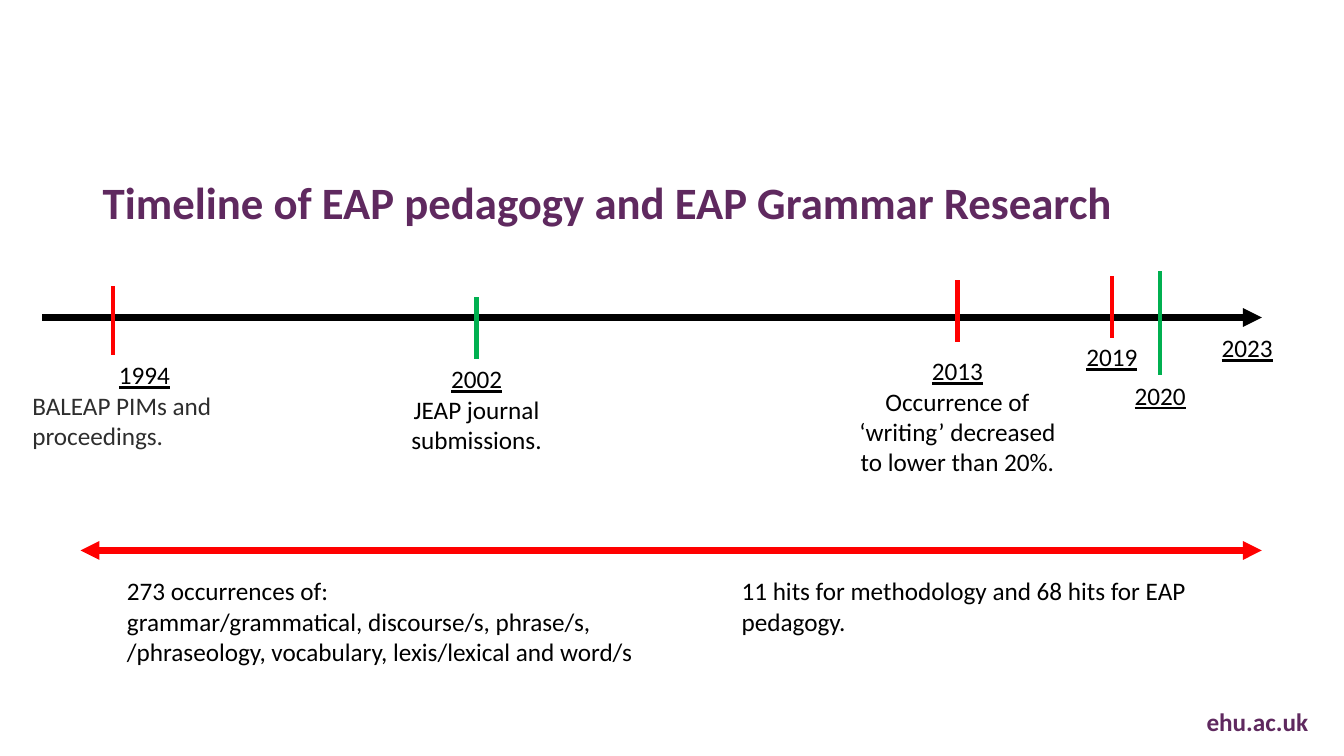
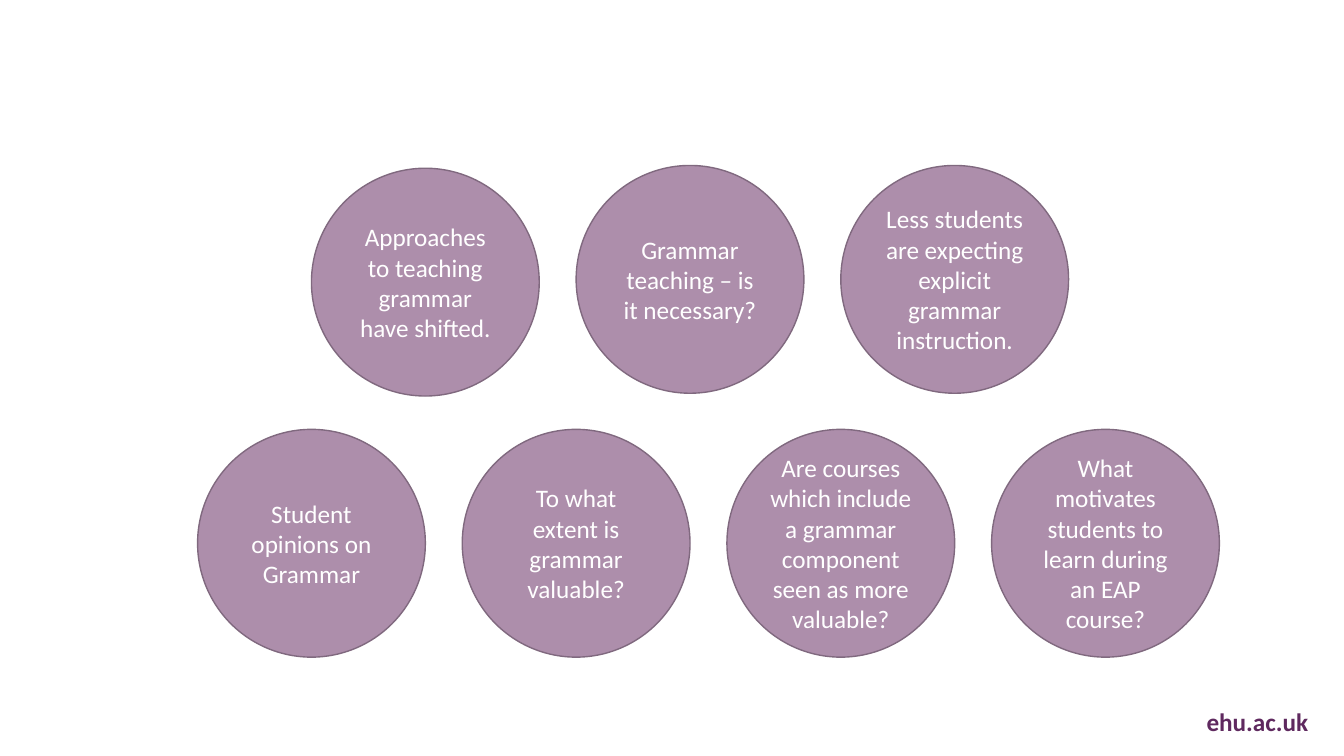
from dataclasses import dataclass
from typing import Optional

from lxml.etree import SubElement
from pptx import Presentation
from pptx.dml.color import RGBColor
from pptx.enum.shapes import MSO_CONNECTOR, MSO_SHAPE
from pptx.enum.text import MSO_ANCHOR, PP_ALIGN
from pptx.oxml.ns import qn
from pptx.util import Cm, Pt

FONT = "Calibri"
PURPLE, MAUVE, MAUVE_EDGE = "5F295F", "AD8EAB", "80697F"
BLACK, GREY, WHITE = "000000", "2E2E2E", "FFFFFF"
RED, GREEN = "FF0000", "00B050"

BODY = {"name": FONT, "size": Pt(18)}
YEAR = BODY | {"underline": True}
FOOTER = BODY | {"bold": True}
TITLE = FOOTER | {"size": Pt(32)}

AXIS_Y, RANGE_Y, ARROW_END = 8.0, 13.87, 31.8
FINDING_TOP, FINDING_W, FINDING_H = 14.38, 13.39, 2.57
CIRCLE_D, CIRCLE_PITCH = 5.74, 6.67


@dataclass(frozen=True)
class Para:
    text: str
    fmt: dict
    color: str = BLACK
    align: PP_ALIGN = PP_ALIGN.LEFT
    spacing: float = 1.0


@dataclass(frozen=True)
class Tick:
    x: float
    top: float
    bottom: float
    color: str


@dataclass(frozen=True)
class Milestone:
    year: str
    center: float
    top: float
    tick: Optional[Tick] = None
    note: str = ""
    width: float = 4.24
    height: float = 1.02
    note_color: str = BLACK
    note_align: PP_ALIGN = PP_ALIGN.CENTER


@dataclass(frozen=True)
class CircleRow:
    left: float
    top: float
    texts: tuple


MILESTONES = (
    Milestone("1994", 3.64, 8.94, Tick(2.84, 7.21, 8.94, RED), "BALEAP PIMs and proceedings.",
              6.15, 2.57, GREY, PP_ALIGN.LEFT),
    Milestone("2002", 12.01, 9.04, Tick(12.01, 7.49, 9.04, GREEN), "JEAP journal submissions.",
              height=2.57),
    Milestone("2013", 24.13, 8.84, Tick(24.13, 7.06, 8.61, RED),
              "Occurrence of ‘writing’ decreased to lower than 20%.", 6.05, 3.33),
    Milestone("2019", 28.02, 8.48, Tick(28.02, 6.96, 8.51, RED)),
    Milestone("2020", 29.24, 9.45, Tick(29.24, 6.83, 9.45, GREEN)),
    Milestone("2023", 31.43, 8.26, height=1.8),
)

FINDINGS = (
    (2.95, ("273 occurrences of:",
            "grammar/grammatical, discourse/s, phrase/s, /phraseology, vocabulary, "
            "lexis/lexical and word/s")),
    (18.44, ("11 hits for methodology and 68 hits for EAP pedagogy.",)),
)

CIRCLE_ROWS = (
    CircleRow(7.85, 4.24, ("Approaches to teaching grammar have shifted.",)),
    CircleRow(14.52, 4.17, (
        "Grammar teaching – is it necessary?",
        "Less students are expecting explicit grammar instruction.",
    )),
    CircleRow(4.98, 10.82, (
        "Student opinions on Grammar",
        "To what extent is grammar valuable?",
        "Are courses which include a grammar component seen as more valuable?",
        "What motivates students to learn during an EAP course?",
    )),
)


def rgb(color: str) -> RGBColor:
    return RGBColor.from_string(color)


def write(tf, paras: list[Para], anchor=MSO_ANCHOR.TOP) -> None:
    tf.word_wrap = True
    tf.vertical_anchor = anchor
    for i, para in enumerate(paras):
        p = tf.paragraphs[0] if i == 0 else tf.add_paragraph()
        p.alignment = para.align
        p.line_spacing = para.spacing
        r = p.add_run()
        r.text = para.text
        for name, value in para.fmt.items():
            setattr(r.font, name, value)
        r.font.color.rgb = rgb(para.color)


def add_text(s, left: float, top: float, width: float, height: float,
             paras: list[Para], anchor=MSO_ANCHOR.TOP):
    sp = s.shapes.add_textbox(Cm(left), Cm(top), Cm(width), Cm(height))
    write(sp.text_frame, paras, anchor)
    return sp


def add_line(s, x1: float, y1: float, x2: float, y2: float, color: str,
             width: float, ends: tuple = ()):
    """Draw a straight line; ends names the arrowhead elements, headEnd first."""
    line = s.shapes.add_connector(MSO_CONNECTOR.STRAIGHT, Cm(x1), Cm(y1), Cm(x2), Cm(y2))
    line.line.color.rgb = rgb(color)
    line.line.width = Pt(width)
    ln = line.line._get_or_add_ln()
    for end in ends:
        SubElement(ln, qn(f"a:{end}"), type="triangle")
    SubElement(line._element.spPr, qn("a:effectLst"))
    return line


def add_milestone(s, m: Milestone) -> None:
    paras = [Para(m.year, YEAR, align=PP_ALIGN.CENTER)]
    if m.note:
        paras.append(Para(m.note, BODY, m.note_color, m.note_align))
    label = add_text(s, m.center - m.width / 2, m.top, m.width, m.height, paras)
    if m.tick:
        t = m.tick
        line = add_line(s, t.x, t.top, t.x, t.bottom, t.color, 3)
        if (t.x, t.bottom) == (m.center, m.top):
            line.end_connect(label, 0)


def add_circle(s, left: float, top: float, text: str) -> None:
    sp = s.shapes.add_shape(MSO_SHAPE.OVAL, Cm(left), Cm(top), Cm(CIRCLE_D), Cm(CIRCLE_D))
    sp.shadow.inherit = False
    sp.fill.solid()
    sp.fill.fore_color.rgb = rgb(MAUVE)
    sp.line.color.rgb = rgb(MAUVE_EDGE)
    sp.line.width = Pt(1)
    write(sp.text_frame, [Para(text, BODY, WHITE, PP_ALIGN.CENTER)], MSO_ANCHOR.MIDDLE)


def new_slide(prs):
    """Add a blank slide with the shared footer."""
    s = prs.slides.add_slide(prs.slide_layouts[6])
    footer = add_text(s, 25.96, 17.68, 7.26, 0.89,
                      [Para("ehu.ac.uk", FOOTER, PURPLE, PP_ALIGN.RIGHT)], MSO_ANCHOR.BOTTOM)
    footer.text_frame.margin_bottom = 0
    return s


def timeline_slide(prs) -> None:
    s = new_slide(prs)
    add_text(s, 2.34, 3.84, 29.21, 2.67,
             [Para("Timeline of EAP pedagogy and EAP Grammar Research", TITLE, PURPLE,
                   spacing=0.9)], MSO_ANCHOR.MIDDLE)
    add_line(s, 1.07, AXIS_Y, ARROW_END, AXIS_Y, BLACK, 4.5, ("tailEnd",))
    for m in MILESTONES:
        add_milestone(s, m)
    add_line(s, 2.03, RANGE_Y, ARROW_END, RANGE_Y, RED, 4.5, ("headEnd", "tailEnd"))
    for left, texts in FINDINGS:
        add_text(s, left, FINDING_TOP, FINDING_W, FINDING_H, [Para(t, BODY) for t in texts])


def circles_slide(prs) -> None:
    s = new_slide(prs)
    for row in CIRCLE_ROWS:
        for i, text in enumerate(row.texts):
            add_circle(s, row.left + i * CIRCLE_PITCH, row.top, text)


def main() -> None:
    prs = Presentation()
    prs.slide_width, prs.slide_height = Cm(33.87), Cm(19.05)
    timeline_slide(prs)
    circles_slide(prs)
    prs.save("out.pptx")


if __name__ == "__main__":
    main()
